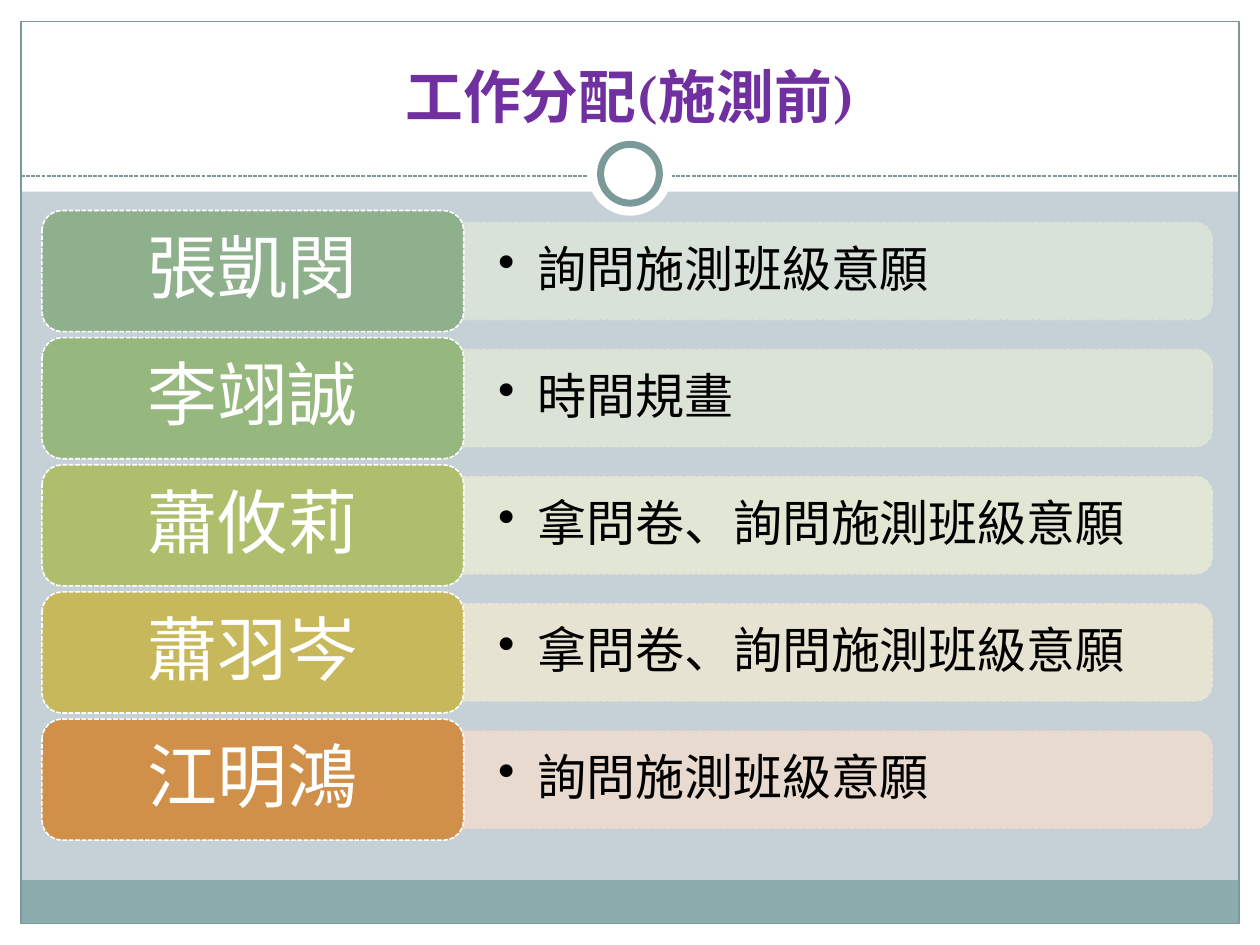
"""Build the slide on who does what before the survey."""
import dataclasses

import lxml.etree
import pptx
import pptx.dml.color
import pptx.enum.dml
import pptx.enum.shapes
import pptx.enum.text
import pptx.oxml.ns
import pptx.util

Pt = pptx.util.Pt
KIND = pptx.enum.shapes.MSO_SHAPE
ALIGN = pptx.enum.text.PP_ALIGN
ANCHOR = pptx.enum.text.MSO_ANCHOR
DASH = pptx.enum.dml.MSO_LINE.SQUARE_DOT
FONT = "TeX Gyre Schola"
TEAL = "7C999A"
WHITE = "FFFFFF"
TOP = 120.3
STEP = 72.65


@dataclasses.dataclass
class Box:
    left: float
    top: float
    width: float
    height: float

    def sizes(self) -> list:
        return [Pt(n) for n in (self.left, self.top, self.width, self.height)]


@dataclasses.dataclass
class Duty:
    name: str
    task: str
    card: str
    bar: str


DUTIES = [
    Duty("張凱閔", "詢問施測班級意願", "8FB08C", "DBE4DA"),
    Duty("李翊誠", "時間規畫", "96B77D", "DEE6D8"),
    Duty("蕭攸莉", "拿問卷、詢問施測班級意願", "ADBF6C", "E6E9D5"),
    Duty("蕭羽岑", "拿問卷、詢問施測班級意願", "C7B95B", "EBE6D2"),
    Duty("江明鴻", "詢問施測班級意願", "D19049", "EEDBCF"),
]


def add_node(parent, tag: str, **attrs: str):
    return lxml.etree.SubElement(parent, pptx.oxml.ns.qn(tag), attrs)


def paint(color, code: str) -> None:
    color.rgb = pptx.dml.color.RGBColor.from_string(code)


def stroke(line, code: str, width: float, dash: bool = False) -> None:
    line.fill.solid()
    paint(line.color, code)
    line.width = Pt(width)
    if dash:
        line.dash_style = DASH


def add_form(slide, kind, box: Box, fill: str = ""):
    form = slide.shapes.add_shape(kind, *box.sizes())
    form.shadow.inherit = False
    form.line.fill.background()
    if fill:
        form.fill.solid()
        paint(form.fill.fore_color, fill)
    else:
        form.fill.background()
    return form


def write(para, text: str, size: float, code: str, bold: bool = False) -> None:
    run = para.add_run()
    run.text = text
    run.font.name = FONT
    run.font.size = Pt(size)
    run.font.bold = bold
    paint(run.font.color, code)


def set_frame(frame, side: float, edge: float):
    frame.word_wrap = True
    frame.vertical_anchor = ANCHOR.MIDDLE
    frame.margin_left = frame.margin_right = Pt(side)
    frame.margin_top = frame.margin_bottom = Pt(edge)
    para = frame.paragraphs[0]
    para.line_spacing = 0.9
    return para


def add_bar(slide, top: float, code: str) -> None:
    long, thick = 428.4, 55.4
    left = 264.2 + (long - thick) / 2
    box = Box(left, top + 6.9 - (long - thick) / 2, thick, long)
    bar = add_form(slide, KIND.ROUND_2_SAME_RECTANGLE, box, code)
    bar.rotation = 90
    stroke(bar.line, code, 0.9, True)
    for node in bar.element.spPr.iter(pptx.oxml.ns.qn("a:srgbClr")):
        add_node(node, "a:alpha", val="90000")


def add_duty(slide, top: float, duty: Duty) -> None:
    add_bar(slide, top, duty.bar)

    area = slide.shapes.add_textbox(*Box(265, top + 9.8, 425.5, 49.7).sizes())
    para = set_frame(area.text_frame, 19.6, 9.8)
    para.level = 1
    para.alignment = ALIGN.LEFT
    props = para._p.get_or_add_pPr()
    props.set("marL", str(Pt(22.5)))
    props.set("indent", str(Pt(-22.5)))
    add_node(props, "a:buChar", char="•")
    write(para, duty.task, 28, "000000")

    card = add_form(slide, KIND.ROUNDED_RECTANGLE, Box(24, top, 241, 69.2), duty.card)
    stroke(card.line, WHITE, 0.9, True)
    para = set_frame(card.text_frame, 12, 6)
    para.alignment = ALIGN.CENTER
    write(para, duty.name, 40, WHITE)


def add_decor(slide) -> None:
    bands = [
        (Box(0, 528, 720, 12), WHITE),
        (Box(0, 0, 720, 109.5), WHITE),
        (Box(0, 0, 12, 540), WHITE),
        (Box(708, 0, 12, 540), WHITE),
        (Box(11.8, 503, 696, 25), "8CADAE"),
    ]
    for box, code in bands:
        add_form(slide, KIND.RECTANGLE, box, code)
    border = add_form(slide, KIND.RECTANGLE, Box(12, 12.2, 696, 515.5))
    stroke(border.line, TEAL, 0.75)

    rule = slide.shapes.add_connector(
        pptx.enum.shapes.MSO_CONNECTOR.STRAIGHT, Pt(12), Pt(100.6), Pt(708), Pt(100.6))
    stroke(rule.line, TEAL, 0.75, True)
    add_node(rule.element.spPr, "a:effectLst")

    add_form(slide, KIND.OVAL, Box(336, 75.3, 48, 48), WHITE)
    ring = add_form(slide, KIND.OVAL, Box(343.2, 82.5, 33.6, 33.6), WHITE)
    stroke(ring.line, TEAL, 4)


def add_title(slide) -> None:
    title = slide.shapes.title
    title.left, title.top, title.width, title.height = Box(24, 18, 672, 60).sizes()
    title.text_frame.vertical_anchor = ANCHOR.BOTTOM
    para = title.text_frame.paragraphs[0]
    para.alignment = ALIGN.CENTER
    write(para, "工作分配(施測前)", 33, "7030A0", True)


def main() -> None:
    deck = pptx.Presentation()
    deck.slide_width, deck.slide_height = Pt(720), Pt(540)
    slide = deck.slides.add_slide(deck.slide_layouts[5])
    back = slide.background.fill
    back.solid()
    paint(back.fore_color, "C5D1D7")
    add_decor(slide)
    add_title(slide)
    title = slide.shapes.title.element
    title.getparent().append(title)
    for row, duty in enumerate(DUTIES):
        add_duty(slide, TOP + row * STEP, duty)
    deck.save("out.pptx")


if __name__ == "__main__":
    main()
